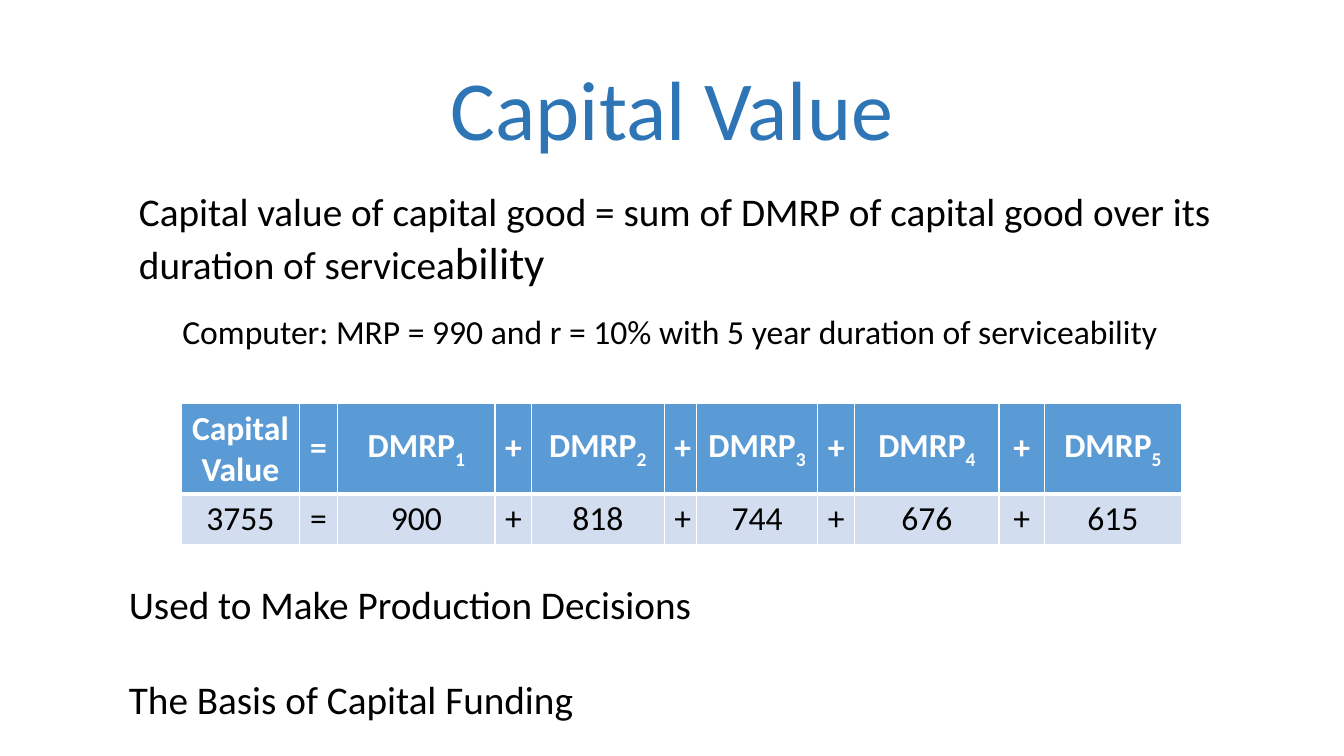
import lxml.etree
import pptx
import pptx.dml.color
import pptx.enum.text
import pptx.oxml.ns
import pptx.util

PX = 9144
FONT = "Calibri"
BLACK, WHITE = "000000", "FFFFFF"
TITLE_BLUE, HEADER_BLUE, BODY_BLUE = "2E75B6", "5B9BD5", "D2DEEF"
CENTER = pptx.enum.text.PP_ALIGN.CENTER
MIDDLE = pptx.enum.text.MSO_ANCHOR.MIDDLE

COLUMN_WIDTHS = [117, 38, 156, 36, 132, 32, 120, 37, 143, 45, 136]
ROW_HEIGHTS = [90, 50]
YEARLY_DMRP = ["900", "818", "744", "676", "615"]


def px(length):
    """Turn whole px into EMU."""
    return pptx.util.Emu(length * PX)


def color(value):
    """Turn a hex string into a colour."""
    return pptx.dml.color.RGBColor.from_string(value)


def style(font, size, value=BLACK, bold=False):
    """Set the typeface, size, colour and weight of a font."""
    font.name = FONT
    font.size = pptx.util.Pt(size)
    font.bold = bold
    font.color.rgb = color(value)


def add_text(slide, box, lines, size, value=BLACK, gap=0):
    """Place lines of text in a box, with a gap in points between them."""
    frame = slide.shapes.add_textbox(*map(px, box)).text_frame
    frame.word_wrap = True
    for index, line in enumerate(lines):
        paragraph = frame.paragraphs[0] if index == 0 else frame.add_paragraph()
        paragraph.text = line
        style(paragraph.font, size, value)
        if index:
            paragraph.space_before = pptx.util.Pt(gap)
    return frame


def add_title(slide, box):
    """Place the centred slide title."""
    title = add_text(slide, box, ["Capital Value"], 60, TITLE_BLUE)
    title.vertical_anchor = MIDDLE
    title.paragraphs[0].alignment = CENTER
    title.paragraphs[0].line_spacing = 0.9


def add_definition(slide, box):
    """Place the definition, whose last letters are larger."""
    definition = add_text(
        slide, box,
        ["Capital value of capital good = sum of DMRP of capital good "
         "over its duration of servicea"], 28)
    ending = definition.paragraphs[0].add_run()
    ending.text = "bility"
    ending.font.size = pptx.util.Pt(32)


def add_borders(cell, top, bottom):
    """Draw white cell borders, with top and bottom widths in points."""
    properties = cell._tc.get_or_add_tcPr()
    for side, width in (("L", 1), ("R", 1), ("T", top), ("B", bottom)):
        line = lxml.etree.SubElement(
            properties, pptx.oxml.ns.qn(f"a:ln{side}"),
            w=str(pptx.util.Pt(width)))
        fill = lxml.etree.SubElement(line, pptx.oxml.ns.qn("a:solidFill"))
        lxml.etree.SubElement(fill, pptx.oxml.ns.qn("a:srgbClr"), val=WHITE)


def fill_cell(cell, label, subscript, header):
    """Write and colour one cell of the equation."""
    add_borders(cell, 1 if header else 3, 3 if header else 1)
    cell.fill.solid()
    cell.fill.fore_color.rgb = color(HEADER_BLUE if header else BODY_BLUE)
    cell.vertical_anchor = MIDDLE
    paragraph = cell.text_frame.paragraphs[0]
    paragraph.alignment = CENTER
    paragraph.text = label
    style(paragraph.font, 24, WHITE if header else BLACK, header)
    if subscript:
        year = paragraph.add_run()
        year.text = subscript
        year.font._element.set("baseline", "-25000")


def add_equation(slide, box):
    """Place the table that sums the yearly DMRP."""
    header, values = [("Capital Value", "")], [("3755", "")]
    for year, dmrp in enumerate(YEARLY_DMRP, 1):
        sign = ("=" if year == 1 else "+", "")
        header += [sign, ("DMRP", str(year))]
        values += [sign, (dmrp, "")]
    table = slide.shapes.add_table(2, len(header), *map(px, box)).table
    for column, width in zip(table.columns, COLUMN_WIDTHS):
        column.width = px(width)
    for row, height in zip(table.rows, ROW_HEIGHTS):
        row.height = px(height)
    for row, terms in enumerate((header, values)):
        for column, (label, subscript) in enumerate(terms):
            fill_cell(table.cell(row, column), label, subscript, row == 0)


def build_capital_value(slide):
    """Lay out the capital value slide."""
    add_title(slide, (0, 40, 1333, 145))
    add_definition(slide, (128, 181, 1098, 111))
    add_equation(slide, (180, 400, sum(COLUMN_WIDTHS), sum(ROW_HEIGHTS)))
    add_text(
        slide, (171, 304, 991, 50),
        ["Computer: MRP = 990 and r = 10% with 5 year duration of "
         "serviceability"], 24)
    add_text(
        slide, (118, 571, 1098, 151),
        ["Used to Make Production Decisions", "The Basis of Capital Funding"],
        28, gap=34)


def main():
    """Build and save the presentation."""
    deck = pptx.Presentation()
    deck.slide_width, deck.slide_height = px(1333), px(750)
    build_capital_value(deck.slides.add_slide(deck.slide_layouts[6]))
    deck.save("out.pptx")


if __name__ == "__main__":
    main()
